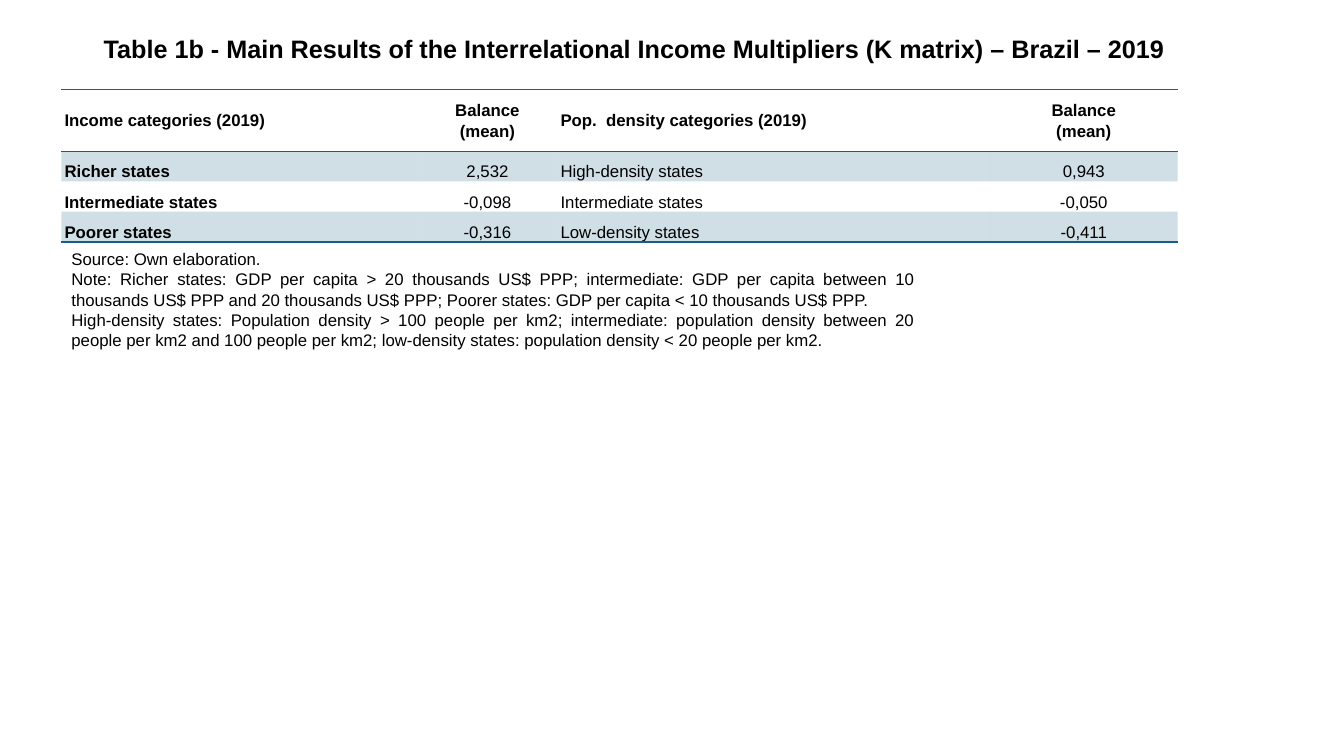
from copy import deepcopy

from lxml.etree import SubElement
from pptx import Presentation
from pptx.dml.color import RGBColor
from pptx.enum.text import MSO_ANCHOR as Anchor, PP_ALIGN as Align
from pptx.oxml.ns import qn
from pptx.util import Inches, Pt

TITLE = ("Table 1b - Main Results of the Interrelational Income Multipliers "
         "(K matrix) – Brazil – 2019")
ROWS = [
    ("Income categories (2019)", "Balance\n(mean)",
     "Pop.  density categories (2019)", "Balance\n(mean)"),
    ("Richer states", "2,532", "High-density states", "0,943"),
    ("Intermediate states", "-0,098", "Intermediate states", "-0,050"),
    ("Poorer states", "-0,316", "Low-density states", "-0,411"),
]
SOURCE = "Source: Own elaboration."
NOTES = [
    "Note: Richer states: GDP per capita > 20 thousands US$ PPP; intermediate: "
    "GDP per capita between 10 thousands US$ PPP and 20 thousands US$ PPP; "
    "Poorer states: GDP per capita < 10 thousands US$ PPP.",
    "High-density states: Population density > 100 people per km2; intermediate: "
    "population density between 20 people per km2 and 100 people per km2; "
    "low-density states: population density < 20 people per km2.",
]
COLUMN_WIDTHS = [3.53, 1.39, 4.29, 1.86]
ROW_HEIGHTS = [0.61, 0.3, 0.3, 0.3]
NO_STYLE = "{2D5ABB26-0587-4C30-8999-92F81FD0307C}"
FONT = "Arial"
BLACK = RGBColor(0x00, 0x00, 0x00)
TEAL = RGBColor(0x15, 0x60, 0x82)


def write(paragraph, text, size=12, bold=False, align=Align.LEFT,
          line_spacing=None, space_after=None):
    paragraph.text = text
    paragraph.alignment = align
    paragraph.line_spacing = line_spacing
    paragraph.space_after = space_after
    for run in paragraph.runs:
        run.font.name = FONT
        run.font.size = Pt(size)
        run.font.bold = bold
        run.font.color.rgb = BLACK
    # Line breaks carry the run format so they do not enlarge the line
    for line_break in paragraph._p.findall(qn("a:br")):
        line_break.append(deepcopy(paragraph.runs[0]._r.rPr))


def add_text_box(slide, left, top, width, height):
    frame = slide.shapes.add_textbox(
        Inches(left), Inches(top), Inches(width), Inches(height)).text_frame
    frame.word_wrap = True
    return frame


def add_border(cell, side):
    line = SubElement(cell._tc.get_or_add_tcPr(), qn(f"a:ln{side}"), w=str(Pt(1)))
    fill = SubElement(line, qn("a:solidFill"))
    SubElement(fill, qn("a:srgbClr"), val=str(TEAL))


def shade(cell):
    """Fill the cell with teal at 20 % opacity."""
    cell.fill.solid()
    cell.fill.fore_color.rgb = TEAL
    color = cell._tc.tcPr.find(qn("a:solidFill")).find(qn("a:srgbClr"))
    SubElement(color, qn("a:alpha"), val="20000")


def add_results_table(slide):
    frame = slide.shapes.add_table(
        len(ROWS), len(COLUMN_WIDTHS), Inches(0.61), Inches(0.89),
        Inches(sum(COLUMN_WIDTHS)), Inches(sum(ROW_HEIGHTS)))
    table = frame.table
    table.first_row = table.horz_banding = False
    table._tbl.tblPr.find(qn("a:tableStyleId")).text = NO_STYLE
    for column, width in zip(table.columns, COLUMN_WIDTHS):
        column.width = Inches(width)
    for row, height in zip(table.rows, ROW_HEIGHTS):
        row.height = Inches(height)

    for row_index, texts in enumerate(ROWS):
        is_header = row_index == 0
        for column_index, text in enumerate(texts):
            cell = table.cell(row_index, column_index)
            cell.margin_left = cell.margin_right = Inches(0.03)
            cell.margin_top = cell.margin_bottom = 0
            cell.vertical_anchor = Anchor.MIDDLE if is_header else Anchor.BOTTOM
            write(cell.text_frame.paragraphs[0], text,
                  bold=is_header or column_index == 0,
                  align=Align.CENTER if column_index % 2 else Align.LEFT,
                  line_spacing=1.07, space_after=Pt(8))
            if is_header:
                add_border(cell, "T")
            if is_header or row_index == len(ROWS) - 1:
                add_border(cell, "B")
            if row_index % 2 or row_index == len(ROWS) - 1:
                shade(cell)
            else:
                cell.fill.background()


def main():
    presentation = Presentation()
    presentation.slide_width = Inches(13.33)
    presentation.slide_height = Inches(7.5)
    slide = presentation.slides.add_slide(presentation.slide_layouts[6])

    add_results_table(slide)
    title = add_text_box(slide, 0.93, 0.28, 10.85, 0.4)
    write(title.paragraphs[0], TITLE, size=18, bold=True)
    notes = add_text_box(slide, 0.61, 2.42, 8.57, 1.31)
    write(notes.paragraphs[0], SOURCE)
    for note in NOTES:
        write(notes.add_paragraph(), note, align=Align.JUSTIFY)

    presentation.save("out.pptx")


if __name__ == "__main__":
    main()
